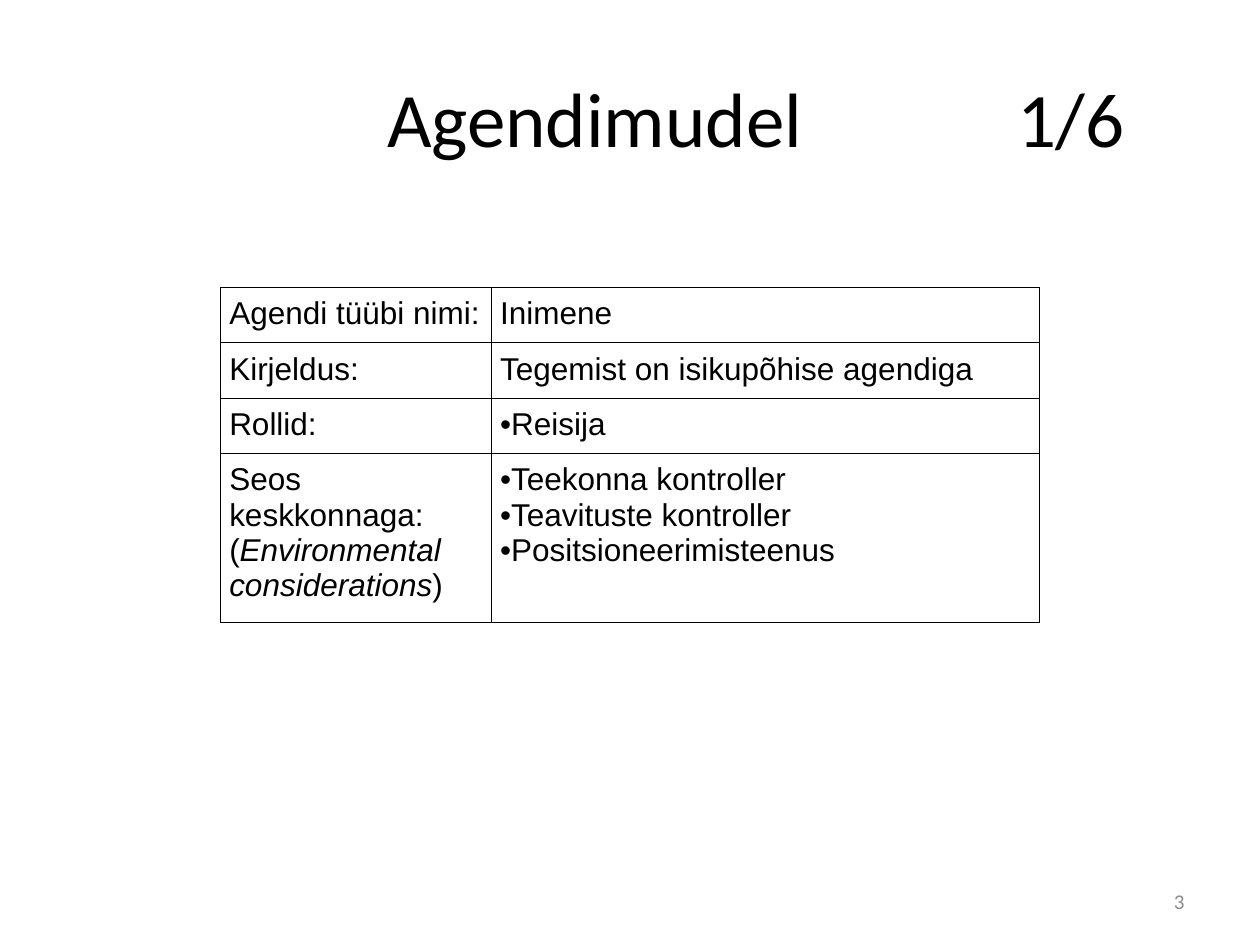
"""Build the agent model slide with its title, table and page number."""
from lxml import etree
from pptx import Presentation
from pptx.dml.color import RGBColor
from pptx.enum import text as t
from pptx.oxml import ns
from pptx.util import Inches, Pt

BLACK = RGBColor(0, 0, 0)
GRAY = RGBColor(0x8C, 0x8C, 0x8C)

TEXT_BOXES = [
    ("\t\tAgendimudel \t\t1/6", (0.5, 0.3, 9, 1.25), t.PP_ALIGN.CENTER,
     {"name": "Calibri", "size": Pt(44)}, BLACK),
    ("3", (7.17, 6.95, 2.33, 0.4), t.PP_ALIGN.RIGHT,
     {"name": "Calibri", "size": Pt(12)}, GRAY),
]
TAB_SIZE = Inches(1)
ROWS = [
    ("Agendi tüübi nimi:", ["Inimene"], False),
    ("Kirjeldus:", ["Tegemist on isikupõhise agendiga"], False),
    ("Rollid:", ["Reisija"], True),
    ("Seos keskkonnaga:\n(*Environmental considerations*)",
     ["Teekonna kontroller", "Teavituste kontroller", "Positsioneerimisteenus"], True),
]
TABLE_BOX = (1.75, 2.28, 6.5, 2.68)
COLUMN_WIDTHS = [2.15, 4.35]
CELL_FONT = {"name": "Arial", "size": Pt(18)}
CELL_MARGIN = Inches(0.07)
MARGINS = ("margin_left", "margin_top", "margin_right", "margin_bottom")


def apply_format(target, values):
    for name, value in values.items():
        setattr(target, name, value)


def add_run(paragraph, words, font, color):
    run = paragraph.add_run()
    run.text = words
    apply_format(run.font, font)
    run.font.color.rgb = color


def add_text_box(slide, words, box, alignment, font, color):
    shape = slide.shapes.add_textbox(*map(Inches, box))
    apply_format(shape.text_frame, {"word_wrap": True, "vertical_anchor": t.MSO_ANCHOR.MIDDLE})
    paragraph = shape.text_frame.paragraphs[0]
    paragraph.alignment = alignment
    paragraph._p.get_or_add_pPr().set("defTabSz", str(TAB_SIZE))
    add_run(paragraph, words, font, color)


def add_borders(cell):
    properties = cell._tc.get_or_add_tcPr()
    for side in ("lnL", "lnR", "lnT", "lnB"):
        line = etree.SubElement(properties, ns.qn(f"a:{side}"), w=str(Pt(0.75)))
        fill = etree.SubElement(line, ns.qn("a:solidFill"))
        etree.SubElement(fill, ns.qn("a:srgbClr"), val=str(BLACK))


def add_bullet(paragraph):
    properties = paragraph._p.get_or_add_pPr()
    etree.SubElement(properties, ns.qn("a:buFont"), typeface=CELL_FONT["name"])
    etree.SubElement(properties, ns.qn("a:buChar"), char="•")


def fill_cell(cell, paragraphs, bulleted):
    apply_format(cell, dict.fromkeys(MARGINS, CELL_MARGIN))
    add_borders(cell)
    cell.fill.background()
    for index, words in enumerate(paragraphs):
        frame = cell.text_frame
        paragraph = frame.add_paragraph() if index else frame.paragraphs[0]
        if bulleted:
            add_bullet(paragraph)
        for number, line in enumerate(words.split("\n")):
            if number:
                paragraph.add_line_break()
            for part, piece in enumerate(line.split("*")):
                add_run(paragraph, piece, {**CELL_FONT, "italic": part % 2 == 1}, BLACK)


def add_agent_table(slide):
    shape = slide.shapes.add_table(len(ROWS), len(COLUMN_WIDTHS), *map(Inches, TABLE_BOX))
    table = shape.table
    apply_format(table, {"first_row": False, "horz_banding": False})
    for column, width in zip(table.columns, COLUMN_WIDTHS):
        column.width = Inches(width)
    for row, (label, values, bulleted) in zip(table.rows, ROWS):
        row.height = Inches(0)
        fill_cell(row.cells[0], [label], False)
        fill_cell(row.cells[1], values, bulleted)
    shape.height = Inches(TABLE_BOX[3])


def main():
    presentation = Presentation()
    apply_format(presentation, {"slide_width": Inches(10), "slide_height": Inches(7.5)})
    slide = presentation.slides.add_slide(presentation.slide_layouts[6])
    for text_box in TEXT_BOXES:
        add_text_box(slide, *text_box)
    add_agent_table(slide)
    presentation.save("out.pptx")


if __name__ == "__main__":
    main()
